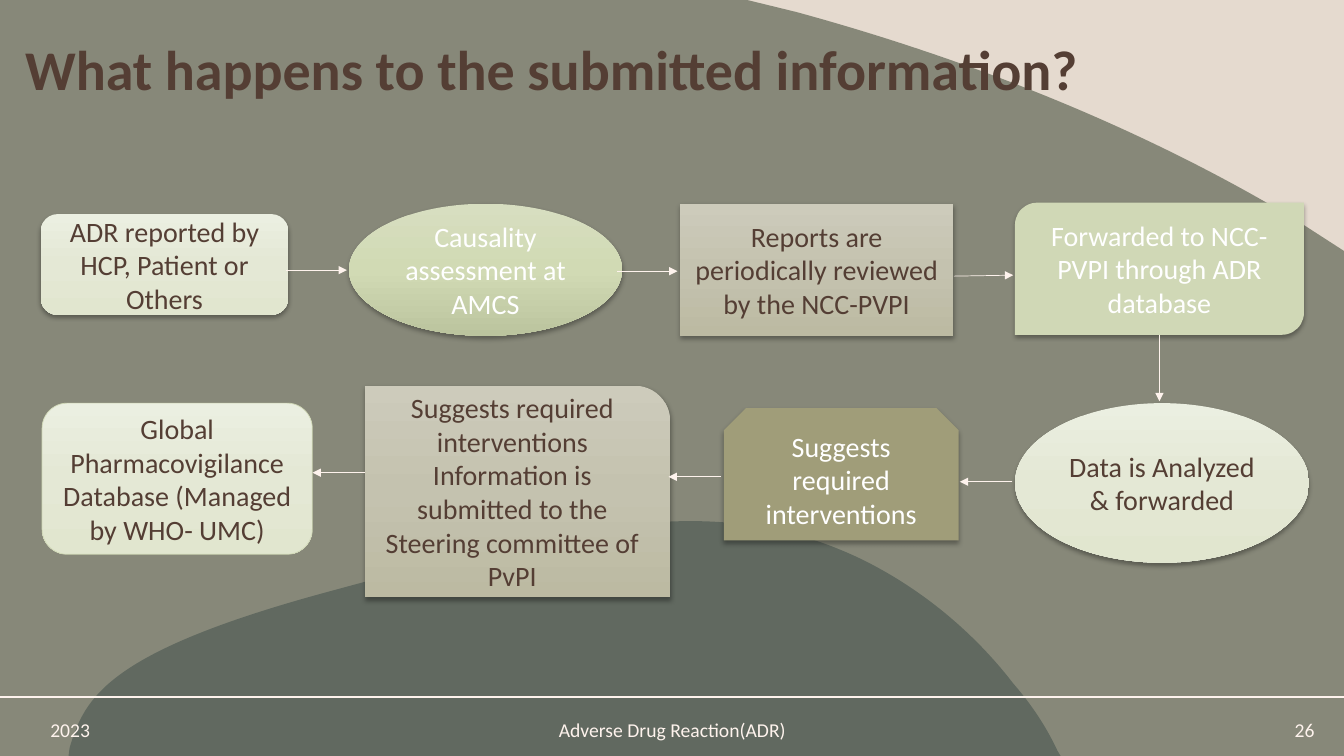
from copy import deepcopy
from pptx import Presentation
from pptx import util as u
from pptx.dml.color import RGBColor
from pptx.enum import shapes, text
from pptx.oxml import parse_xml
from pptx.oxml.ns import nsdecls, qn

presentation = Presentation()
presentation.slide_width = u.Inches(13.33)
presentation.slide_height = u.Inches(7.5)
column = presentation.slide_width / 100
row = presentation.slide_height / 100
slide = presentation.slides.add_slide(presentation.slide_layouts[6])

CREAM, BROWN, WHITE, SAGE = "FEF3ED", "543E34", "FFFFFF", "D0D8B6"
PALE = ["EBEFE1", "E4E8D5", "E1E6CF"]
GREEN = ["D7DEC0", "D1DAB4", "BBC49E"]
STONE = ["CDCBBB", "C4C2AF", "BCBAA2"]


def paint(fill, *colors):
    if len(colors) == 1:
        fill.solid()
        fill.fore_color.rgb = RGBColor.from_string(colors[0])
        return
    fill.gradient()
    fill.gradient_angle = 270
    stops = fill.gradient_stops[0]._gs.getparent()
    stops.insert(1, deepcopy(stops[0]))
    for index, (stop, color) in enumerate(zip(fill.gradient_stops, colors)):
        stop.position = index / (len(colors) - 1)
        stop.color.rgb = RGBColor.from_string(color)


def connect(left, top, right, bottom, width):
    connector = slide.shapes.add_connector(
        shapes.MSO_CONNECTOR.STRAIGHT,
        *[int(n) for n in (left * column, top * row, right * column, bottom * row)])
    connector.line.width = u.Pt(width)
    paint(connector.line.fill, CREAM)
    connector._element.spPr.append(parse_xml(f"<a:effectLst {nsdecls('a')}/>"))
    return connector


paint(slide.background.fill, "E5DACF")

hill = [(51.39, 68.93),
        (55.81, 68.93, 59.94, 70.4, 64.14, 74),
        (69.77, 78.93, 73.44, 85.87, 75.39, 90.4),
        (76.44, 92.53, 77.72, 95.6, 78.69, 99.33),
        (78.92, 100), (5.1, 100), (5.18, 98.93),
        (5.33, 98, 5.48, 97.2, 5.7, 96.27),
        (6.98, 90.67, 10.13, 85.2, 24.16, 78.4),
        (35.48, 72.93, 43.96, 68.93, 51.39, 68.93)]
dome = [(0, 0), (55.59, 0), (59.26, 1.6),
        (73, 8.27, 85.67, 17.6, 96.4, 29.07),
        (100, 33.2), (100, 100), (0, 100)]
for segments, color, opacity in ((hill, "5D6A76", 73), (dome, "4E5745", 62)):
    points = [(x * column, y * row) for segment in segments
              for x, y in zip(segment[::2], segment[1::2])]
    builder = slide.shapes.build_freeform(*points[0])
    builder.add_line_segments(points[1:], close=True)
    shape = builder.convert_to_shape()
    corners = iter(list(shape._element.spPr.iter(qn("a:lnTo"))))
    for segment in segments[1:]:
        corner = next(corners)
        if len(segment) == 6:
            curve = parse_xml(f"<a:cubicBezTo {nsdecls('a')}/>")
            corner.addprevious(curve)
            for handle in (corner, next(corners), next(corners)):
                curve.append(handle[0])
                handle.getparent().remove(handle)
    shape.shadow.inherit = False
    shape.line.fill.background()
    paint(shape.fill, color)
    shade = shape._element.spPr.find(f"{qn('a:solidFill')}/{qn('a:srgbClr')}")
    shade.append(parse_xml(f'<a:alpha {nsdecls("a")} val="{opacity * 1000}"/>'))

connect(0, 92.2, 100, 92.2, 1.25)

kinds = shapes.MSO_SHAPE
align = text.PP_ALIGN
middle, top_anchor = text.MSO_ANCHOR.MIDDLE, text.MSO_ANCHOR.TOP
footer = dict(size=u.Pt(14), bold=False)
heading = dict(size=u.Pt(40), bold=True)
step_text = dict(size=u.Pt(20), bold=False)

labels = [
    ("2023", (3, 94.27, 8.1, 4.53), align.LEFT, middle, CREAM, footer),
    ("Adverse Drug Reaction(ADR)", (35.93, 94.27, 28.21, 4.53), align.CENTER, middle, CREAM, footer),
    ("26", (90.44, 94.27, 8.1, 4.53), align.RIGHT, middle, CREAM, footer),
    ("What happens to the submitted information?", (1.13, 3.87, 84.17, 19.33),
     align.LEFT, top_anchor, BROWN, heading),
]
steps = [
    ("ADR reported by HCP, Patient or Others", (3.03, 28.32, 18.42, 13.33),
     kinds.ROUNDED_RECTANGLE, PALE, BROWN),
    ("Causality assessment at AMCS", (25.96, 26.95, 20.33, 17.47),
     kinds.OVAL, GREEN, WHITE),
    ("Reports are periodically reviewed by the NCC-PVPI", (50.6, 26.95, 20.33, 17.47),
     kinds.RECTANGLE, STONE, BROWN),
    ("Forwarded to NCC-PVPI through ADR database", (75.52, 26.82, 21.5, 17.47),
     kinds.ROUND_2_DIAG_RECTANGLE, [SAGE], WHITE),
    ("Suggests required interventions", (53.86, 54, 17.46, 17.47),
     kinds.SNIP_2_SAME_RECTANGLE, ["A09D79"], WHITE),
    ("Suggests required interventions Information is submitted to the Steering committee of PvPI",
     (27.15, 51.03, 22.71, 27.97), kinds.ROUND_1_RECTANGLE, STONE, BROWN),
    ("Data is Analyzed & forwarded", (75.52, 53.33, 21.88, 21.1),
     kinds.OVAL, PALE, BROWN),
    ("Global Pharmacovigilance Database (Managed by WHO- UMC)", (3.13, 53.33, 20.11, 20),
     kinds.ROUNDED_RECTANGLE, PALE, BROWN),
]
items = [(*label, None, None) for label in labels]
items += [(words, box, align.CENTER, middle, ink, step_text, kind, colors)
          for words, box, kind, colors, ink in steps]

for words, box, alignment, anchor, ink, font_format, kind, colors in items:
    place = [int(n * unit) for n, unit in zip(box, (column, row, column, row))]
    if kind is None:
        shape = slide.shapes.add_textbox(*place)
    else:
        shape = slide.shapes.add_shape(kind, *place)
        paint(shape.fill, *colors)
        shape.shadow.inherit = False
        if words.startswith("Global"):
            paint(shape.line.fill, SAGE)
            shape.line.width = u.Pt(0.5)
        else:
            shape.line.fill.background()
            shape._element.spPr.find(qn("a:effectLst")).append(parse_xml(
                f'<a:outerShdw {nsdecls("a")} blurRad="{u.Pt(3.5)}" dist="{u.Pt(2.2)}" '
                'dir="5400000" algn="ctr" rotWithShape="0">'
                '<a:srgbClr val="000000"><a:alpha val="32000"/></a:srgbClr></a:outerShdw>'))
    frame = shape.text_frame
    frame.word_wrap = True
    frame.vertical_anchor = anchor
    paragraph = frame.paragraphs[0]
    paragraph.alignment = alignment
    run = paragraph.add_run()
    run.text = words
    for name, value in dict(font_format, name="Calibri").items():
        setattr(run.font, name, value)
    paint(run.font.fill, ink)

arrows = [
    (21.3, 35.73, 25.81, 35.73), (45.91, 35.87, 50.41, 35.87),
    (70.97, 36.53, 75.39, 36.4), (86.27, 44.27, 86.27, 53.07),
    (75.32, 63.73, 71.42, 63.73), (53.64, 63.07, 49.74, 63.07),
    (27.16, 62.53, 23.26, 62.53),
]
for arrow in arrows:
    connector = connect(*arrow, 0.5)
    connector.line._get_or_add_ln().append(
        parse_xml(f'<a:tailEnd {nsdecls("a")} type="triangle"/>'))

presentation.save("out.pptx")
